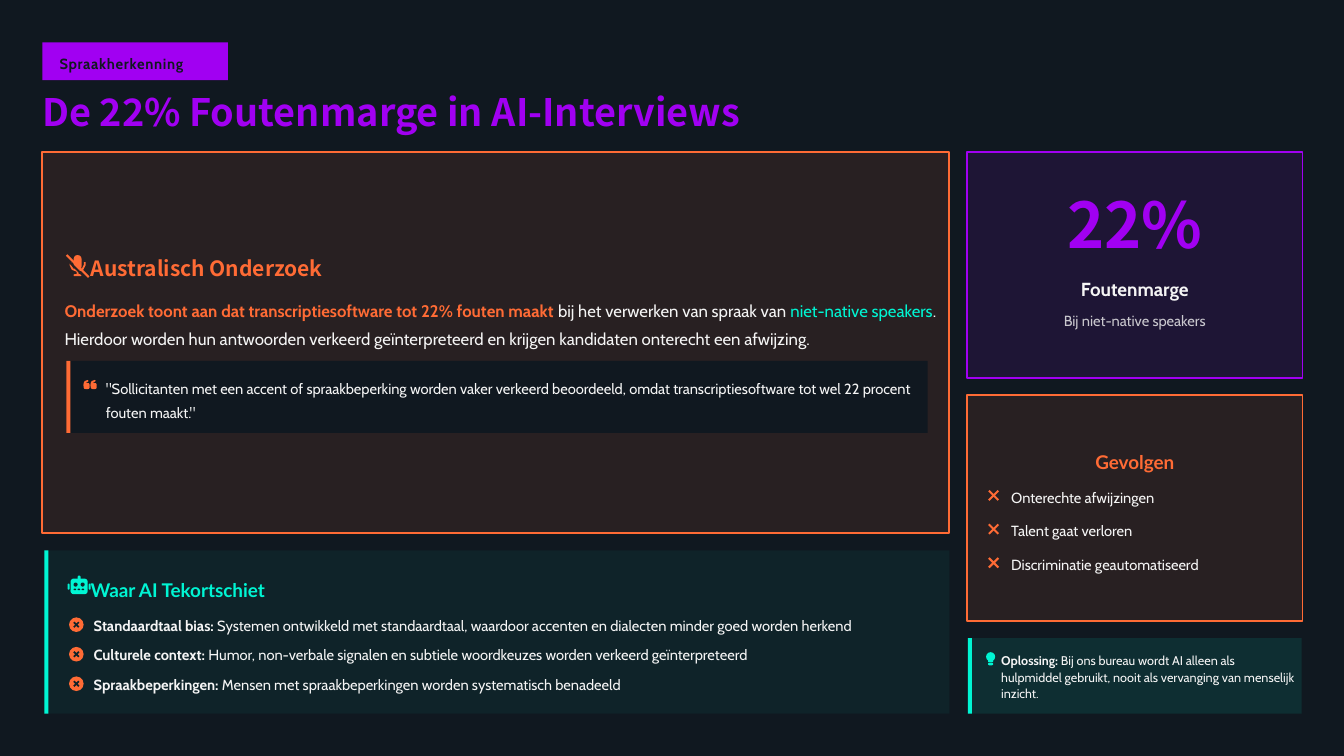
from lxml import etree
from pptx import Presentation, util as u
from pptx.dml.color import RGBColor
from pptx.enum import shapes, text as t
from pptx.oxml.ns import qn

theme = {
    "dark": "101820", "purple": "A100F2", "orange": "FF6B35", "mint": "00F5D3", "white": "F5F5F5",
    "orange_panel": "282022", "mint_panel": "0F2329",
    "body_font": "Cabin", "title_font": "Noto Sans CJK SC", "label_font": "Lato",
    "figure": 45, "title": 27, "heading": 15, "subheading": 13.5, "lead": 12, "body": 10.5, "note": 9,
}
kind = shapes.MSO_SHAPE

presentation = Presentation()
presentation.slide_width = u.Inches(13.33)
presentation.slide_height = u.Inches(7.5)
column = presentation.slide_width / 1333
row = presentation.slide_height / 750
slide = presentation.slides.add_slide(presentation.slide_layouts[6])
slide.background.fill.solid()
slide.background.fill.fore_color.rgb = RGBColor.from_string(theme["dark"])


def draw(preset, box, color, opacity=None, border=False, adjust=None):
    left, top, width, height = box
    shape = slide.shapes.add_shape(preset, int(left * column), int(top * row),
                                   int(width * column), int(height * row))
    shape.shadow.inherit = False
    shape.fill.solid()
    shape.fill.fore_color.rgb = RGBColor.from_string(theme[color])
    if opacity:
        tint = shape._element.spPr.find(qn("a:solidFill")).find(qn("a:srgbClr"))
        etree.SubElement(tint, qn("a:alpha")).set("val", str(opacity * 1000))
    if border:
        shape.line.color.rgb = RGBColor.from_string(theme[color])
        shape.line.width = u.Pt(1.25)
    else:
        shape.line.fill.background()
    if adjust is not None:
        shape.adjustments[0] = adjust
    return shape


def write(box, content, size="body", font="body_font", color="white", bold=False, spacing=1.2,
          centered=False, inset=(0, 0), tracking=None, opacity=None):
    left, top, width, height = box
    frame = slide.shapes.add_textbox(int(left * column), int(top * row),
                                     int(width * column), int(height * row)).text_frame
    frame.word_wrap = True
    frame.vertical_anchor = t.MSO_ANCHOR.MIDDLE
    frame.margin_left = frame.margin_right = int(inset[0] * column)
    frame.margin_top = frame.margin_bottom = int(inset[1] * row)
    paragraph = frame.paragraphs[0]
    paragraph.line_spacing = spacing
    paragraph.alignment = t.PP_ALIGN.CENTER if centered else t.PP_ALIGN.LEFT
    pieces = [(content, color, bold)] if isinstance(content, str) else content
    for wording, shade, weight in pieces:
        run = paragraph.add_run()
        run.text = wording
        run.font.name = theme[font]
        run.font.size = u.Pt(theme[size])
        run.font.bold = weight
        run.font.color.rgb = RGBColor.from_string(theme[shade])
        if tracking:
            run._r.get_or_add_rPr().set("spc", str(tracking))
        if opacity:
            tint = run._r.rPr.find(qn("a:solidFill")).find(qn("a:srgbClr"))
            etree.SubElement(tint, qn("a:alpha")).set("val", str(opacity * 1000))


draw(kind.RECTANGLE, (42, 42, 184, 37.5), "purple")
write((42, 42, 192, 38), "Spraakherkenning", color="dark", bold=True, inset=(17, 8), tracking=50)
write((42, 92, 1269, 42), "De 22% Foutenmarge in AI-Interviews", size="title", font="title_font",
      color="purple", bold=True, spacing=0.9)

draw(kind.RECTANGLE, (42, 151, 899.5, 378), "orange", opacity=10, border=True)
draw(kind.ROUNDED_RECTANGLE, (73, 253, 8, 15), "orange", adjust=0.5)
draw(kind.RECTANGLE, (76, 269, 2, 4), "orange")
draw(kind.ROUNDED_RECTANGLE, (73, 272, 8, 2), "orange", adjust=0.5)
builder = slide.shapes.build_freeform(70, 260.5, scale=column)
builder.add_line_segments([(70, 263), (72, 267), (77, 269), (82, 267), (84, 263), (84, 260.5)], close=False)
cradle = builder.convert_to_shape()
cradle.shadow.inherit = False
cradle.fill.background()
cradle.line.color.rgb = RGBColor.from_string(theme["orange"])
cradle.line.width = u.Pt(1.25)
for shift, color in [(2, "orange_panel"), (0, "orange")]:
    slash = slide.shapes.add_connector(shapes.MSO_CONNECTOR.STRAIGHT, int((66 - shift) * column),
                                       int((253 + shift) * row), int((88 - shift) * column),
                                       int((275 + shift) * row))
    slash.line.color.rgb = RGBColor.from_string(theme[color])
    slash.line.width = u.Pt(1.5)
    etree.SubElement(slash._element.spPr, qn("a:effectLst"))
write((90, 249, 841, 29), "Australisch Onderzoek", size="heading", font="title_font",
      color="orange", bold=True)
write((64, 291, 865, 54), [
    ("Onderzoek toont aan dat transcriptiesoftware tot 22% fouten maakt", "orange", True),
    (" bij het verwerken van spraak van ", "white", False),
    ("niet-native speakers", "mint", False),
    (". Hierdoor worden hun antwoorden verkeerd geïnterpreteerd en krijgen kandidaten onterecht een afwijzing.",
     "white", False),
], size="lead", spacing=1.4)

draw(kind.RECTANGLE, (66, 358, 854, 71.5), "dark")
draw(kind.RECTANGLE, (66, 358, 4, 71.5), "orange")
for left in (83, 90):
    draw(kind.ROUNDED_RECTANGLE, (left, 380, 6, 6), "orange", adjust=0.3)
    builder = slide.shapes.build_freeform(left, 383, scale=column)
    builder.add_line_segments([(left, 380), (left + 1, 378), (left + 4, 377), (left + 5, 378),
                               (left + 2, 379.5), (left + 2, 383)])
    tail = builder.convert_to_shape()
    tail.shadow.inherit = False
    tail.fill.solid()
    tail.fill.fore_color.rgb = RGBColor.from_string(theme["orange"])
    tail.line.fill.background()
write((105, 370, 809, 48),
      '"Sollicitanten met een accent of spraakbeperking worden vaker verkeerd beoordeeld, omdat '
      'transcriptiesoftware tot wel 22 procent fouten maakt."', spacing=1.4)

draw(kind.RECTANGLE, (44, 546, 897.5, 162), "mint", opacity=5)
draw(kind.RECTANGLE, (44, 546, 4, 162), "mint")
draw(kind.ROUNDED_RECTANGLE, (70, 574, 17, 15.5), "mint", adjust=0.2)
draw(kind.ROUNDED_RECTANGLE, (77, 571, 3, 5), "mint", adjust=0.5)
for ear in (67, 88):
    draw(kind.ROUNDED_RECTANGLE, (ear, 579, 2, 6), "mint", adjust=0.5)
for eye in (73, 80):
    draw(kind.OVAL, (eye, 578, 4, 4), "mint_panel")
for tooth in range(3):
    draw(kind.ROUNDED_RECTANGLE, (73 + 4 * tooth, 584, 2.5, 1.5), "mint_panel", adjust=0.5)
write((90, 567, 840, 29), "Waar AI Tekortschiet", size="subheading", font="label_font",
      color="mint", bold=True, spacing=1.3)

shortcomings = [
    ("Standaardtaal bias:",
     " Systemen ontwikkeld met standaardtaal, waardoor accenten en dialecten minder goed worden herkend"),
    ("Culturele context:",
     " Humor, non-verbale signalen en subtiele woordkeuzes worden verkeerd geïnterpreteerd"),
    ("Spraakbeperkingen:", " Mensen met spraakbeperkingen worden systematisch benadeeld"),
]
for index, (label, detail) in enumerate(shortcomings):
    top = 608 + 29.3 * index
    draw(kind.OVAL, (68.5, top + 4.5, 14.5, 14.5), "orange")
    draw(kind.MATH_MULTIPLY, (71, top + 7, 9.5, 9.5), "mint_panel", adjust=0.18)
    write((93, top, 830, 21), [(label, "white", True), (detail, "white", False)])

draw(kind.RECTANGLE, (959, 151, 333, 224), "purple", opacity=10, border=True)
write((961, 198, 329, 62), "22%", size="figure", font="title_font", color="purple", bold=True,
      spacing=0.8, centered=True)
write((972, 269, 307, 29), "Foutenmarge", size="subheading", bold=True, spacing=1.3, centered=True)
write((973, 306, 305, 21), "Bij niet-native speakers", centered=True, opacity=80)

draw(kind.RECTANGLE, (959, 392, 333, 224.5), "orange", opacity=10, border=True)
write((972, 440, 307, 29), "Gevolgen", size="subheading", font="label_font", color="orange",
      bold=True, spacing=1.3, centered=True)
consequences = ["Onterechte afwijzingen", "Talent gaat verloren", "Discriminatie geautomatiseerd"]
for index, consequence in enumerate(consequences):
    top = 481 + 33.4 * index
    draw(kind.MATH_MULTIPLY, (976.5, top + 1.5, 18, 18), "orange", adjust=0.11)
    write((1003, top, 270, 21), consequence)

draw(kind.RECTANGLE, (960, 633, 331, 75), "mint", opacity=10)
draw(kind.RECTANGLE, (960, 633, 4, 75), "mint")
draw(kind.OVAL, (978, 647, 9, 9), "mint")
draw(kind.RECTANGLE, (980, 654, 5, 3), "mint")
draw(kind.ROUNDED_RECTANGLE, (980, 657.5, 5, 2.5), "mint", adjust=0.5)
write((993, 646, 292, 50), [
    ("Oplossing:", "white", True),
    (" Bij ons bureau wordt AI alleen als hulpmiddel gebruikt, nooit als vervanging van menselijk inzicht.",
     "white", False),
], size="note", spacing=1.1)

presentation.save("out.pptx")
